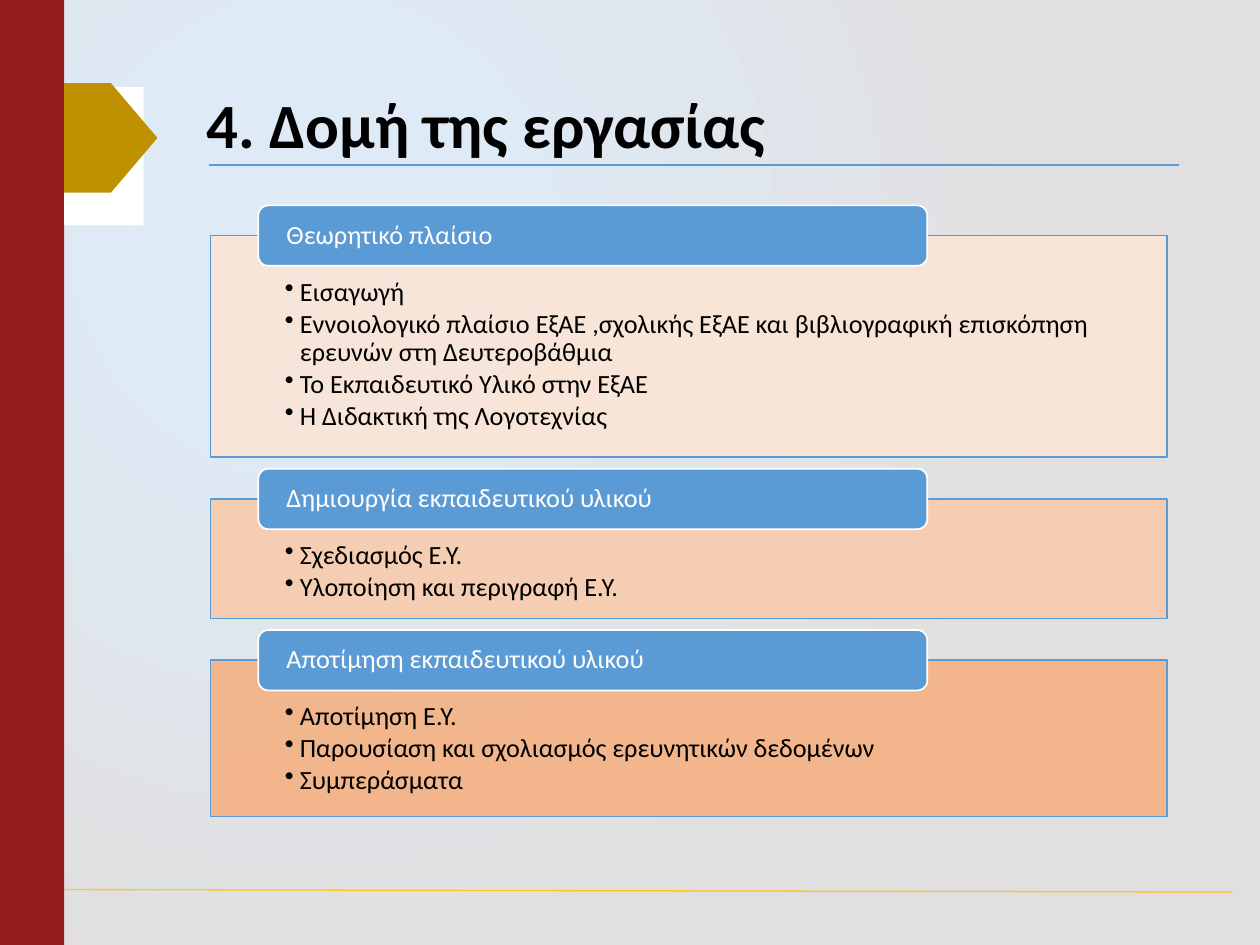
from dataclasses import dataclass

from lxml.etree import SubElement
from pptx import Presentation
from pptx.dml.color import RGBColor
from pptx.enum.shapes import MSO_CONNECTOR, MSO_SHAPE
from pptx.enum.text import MSO_ANCHOR, MSO_AUTO_SIZE, PP_ALIGN
from pptx.oxml.ns import qn
from pptx.util import Inches, Pt


@dataclass(frozen=True)
class Theme:
    font: str = "Calibri"
    title_size: int = 36
    text_size: int = 15
    black: str = "000000"
    white: str = "FFFFFF"
    blue: str = "5B9BD5"
    red: str = "931B1B"
    ochre: str = "BF9000"
    yellow: str = "FFC61A"
    glow: str = "DEEBF7"
    grey: str = "E1DFDF"


THEME = Theme()
PANEL_LEFT, PANEL_TOP, PANEL_WIDTH, PANEL_GAP = 1.67, 1.87, 7.59, 0.33
HEADER_LEFT, HEADER_WIDTH, HEADER_HEIGHT = 2.05, 5.31, 0.48

SECTIONS = [
    ("Θεωρητικό πλαίσιο", 1.76, "FBE5D6", [
        "Εισαγωγή",
        "Εννοιολογικό πλαίσιο ΕξΑΕ ,σχολικής ΕξΑΕ και βιβλιογραφική "
        "επισκόπηση ερευνών στη Δευτεροβάθμια",
        "Το Εκπαιδευτικό Υλικό στην ΕξΑΕ",
        "Η Διδακτική της Λογοτεχνίας",
    ]),
    ("Δημιουργία εκπαιδευτικού υλικού", 0.95, "F8CBAD", [
        "Σχεδιασμός Ε.Υ.",
        "Υλοποίηση και περιγραφή Ε.Υ.",
    ]),
    ("Αποτίμηση εκπαιδευτικού υλικού", 1.24, "F4B183", [
        "Αποτίμηση Ε.Υ.",
        "Παρουσίαση και σχολιασμός ερευνητικών δεδομένων",
        "Συμπεράσματα",
    ]),
]


def paint_background(page):
    fill = page.background.fill
    fill.gradient()
    for stop, position, color in zip(fill.gradient_stops, (0.17, 1), (THEME.glow, THEME.grey)):
        stop.position = position
        stop.color.rgb = RGBColor.from_string(color)
    gradient = page.element.find(".//" + qn("a:gradFill"))
    gradient.remove(gradient.find(qn("a:lin")))
    circle = SubElement(gradient, qn("a:path"), path="circle")
    SubElement(circle, qn("a:fillToRect"), l="50000", t="50000", r="100000", b="100000")


def add_box(page, kind, left, top, width, height, fill, line=None):
    box = page.shapes.add_shape(kind, Inches(left), Inches(top), Inches(width), Inches(height))
    box.shadow.inherit = False
    box.fill.solid()
    box.fill.fore_color.rgb = RGBColor.from_string(fill)
    if line:
        box.line.color.rgb = RGBColor.from_string(line)
        box.line.width = Pt(1)
    else:
        box.line.fill.background()
    return box


def add_rule(page, start, end, color):
    rule = page.shapes.add_connector(MSO_CONNECTOR.STRAIGHT, *map(Inches, start + end))
    rule.line.color.rgb = RGBColor.from_string(color)
    rule.line.width = Pt(0.75)
    SubElement(rule.element.spPr, qn("a:effectLst"))


def set_frame(box, anchor, left, top, right, bottom):
    frame = box.text_frame
    frame.word_wrap = True
    frame.auto_size = MSO_AUTO_SIZE.NONE
    frame.vertical_anchor = anchor
    frame.margin_left, frame.margin_top = Inches(left), Inches(top)
    frame.margin_right, frame.margin_bottom = Inches(right), Inches(bottom)
    return frame


def write(para, text, size, color, bold=False):
    para.alignment = PP_ALIGN.LEFT
    para.line_spacing = 0.9
    span = para.add_run()
    span.text = text
    span.font.name = THEME.font
    span.font.size = Pt(size)
    span.font.bold = bold
    span.font.color.rgb = RGBColor.from_string(color)


def add_bullet(para):
    properties = para._p.get_or_add_pPr()
    properties.set("marL", str(Inches(0.12)))
    properties.set("indent", str(-Inches(0.12)))
    SubElement(properties, qn("a:buChar"), char="•")


def set_title(page, text):
    title = page.shapes.title
    title.left, title.top = Inches(1.54), Inches(0.6)
    title.width, title.height = Inches(7.87), Inches(0.84)
    frame = set_frame(title, MSO_ANCHOR.MIDDLE, 0.1, 0.05, 0.1, 0.05)
    write(frame.paragraphs[0], text, THEME.title_size, THEME.black, bold=True)


def add_panel(page, top, height, fill, items):
    panel = add_box(page, MSO_SHAPE.RECTANGLE, PANEL_LEFT, top, PANEL_WIDTH, height, fill, THEME.blue)
    color = panel.element.spPr.find(qn("a:solidFill")).find(qn("a:srgbClr"))
    SubElement(color, qn("a:alpha"), val="90000")
    frame = set_frame(panel, MSO_ANCHOR.TOP, 0.59, 0.34, 0.59, 0.12)
    for index, item in enumerate(items):
        para = frame.add_paragraph() if index else frame.paragraphs[0]
        write(para, item, THEME.text_size, THEME.black)
        para.space_after = Pt(2)
        add_bullet(para)


def add_header(page, panel_top, text):
    header = add_box(page, MSO_SHAPE.ROUNDED_RECTANGLE, HEADER_LEFT, panel_top - HEADER_HEIGHT / 2,
                     HEADER_WIDTH, HEADER_HEIGHT, THEME.blue, THEME.white)
    frame = set_frame(header, MSO_ANCHOR.MIDDLE, 0.2, 0, 0.2, 0)
    write(frame.paragraphs[0], text, THEME.text_size, THEME.white)


def add_decoration(page):
    add_box(page, MSO_SHAPE.RECTANGLE, 0, 0, 0.51, 7.5, THEME.red)
    add_rule(page, (1.66, 1.31), (9.36, 1.31), THEME.blue)
    add_rule(page, (0.51, 7.06), (9.78, 7.08), THEME.yellow)
    add_box(page, MSO_SHAPE.RECTANGLE, 0.51, 0.69, 0.63, 1.1, THEME.white)
    add_box(page, MSO_SHAPE.PENTAGON, 0.51, 0.66, 0.74, 0.87, THEME.ochre)


def main():
    deck = Presentation()
    deck.slide_width, deck.slide_height = Inches(10), Inches(7.5)
    page = deck.slides.add_slide(deck.slide_layouts[5])
    paint_background(page)
    add_decoration(page)
    set_title(page, "4. Δομή της εργασίας")
    top = PANEL_TOP
    for heading, height, fill, items in SECTIONS:
        add_panel(page, top, height, fill, items)
        add_header(page, top, heading)
        top += height + PANEL_GAP
    deck.save("out.pptx")


if __name__ == "__main__":
    main()
